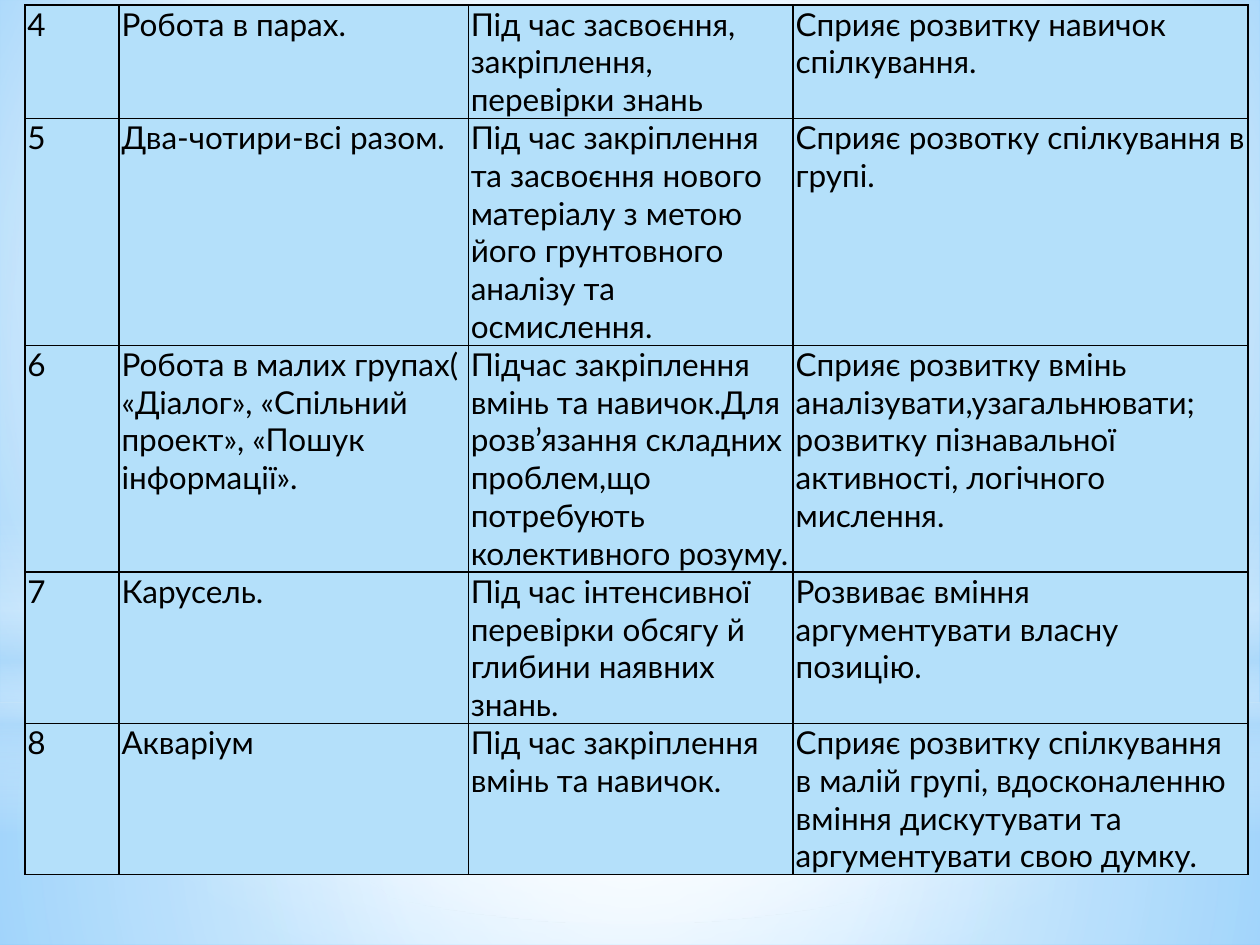
from lxml import etree
from pptx import Presentation
from pptx.dml.color import RGBColor
from pptx.enum import shapes, text
from pptx.oxml import ns, parse_xml
from pptx.util import Cm, Pt

COLORS = {
    "white": "FFFFFF",
    "pale": "B4DCFA",
    "sky": "9ED5FF",
    "blue": "5BB9FF",
    "cell": "B4E0FA",
    "ink": "000000",
}
FONT = "Lato"
WIDTH, HEIGHT = 25.4, 19.05
LINE_HEIGHT = 0.76
COLUMN_WIDTHS = (1.9, 7.04, 6.55, 9.17)
CENTER = (50, 50, 50, 50)

METHODS = [
    ("4", "Робота в парах.",
     "Під час засвоєння, закріплення, перевірки знань",
     "Сприяє розвитку навичок спілкування."),
    ("5", "Два-чотири-всі разом.",
     "Під час закріплення та засвоєння нового матеріалу з метою його "
     "грунтовного аналізу та осмислення.",
     "Сприяє розвотку спілкування в групі."),
    ("6", "Робота в малих групах( «Діалог», «Спільний проект», «Пошук інформації».",
     "Підчас закріплення вмінь та навичок.Для розв’язання складних "
     "проблем,що потребують колективного розуму.",
     "Сприяє розвитку вмінь аналізувати,узагальнювати; розвитку "
     "пізнавальної активності, логічного мислення."),
    ("7", "Карусель.",
     "Під час інтенсивної перевірки обсягу й глибини наявних знань.",
     "Розвиває вміння аргументувати власну позицію."),
    ("8", "Акваріум",
     "Під час закріплення вмінь та навичок.",
     "Сприяє розвитку спілкування в малій групі, вдосконаленню вміння "
     "дискутувати та аргументувати свою думку."),
]
LINES_PER_ROW = (3, 6, 6, 4, 4)


def gradient(stops, focus=None):
    marks = "".join(
        f'<a:gs pos="{position * 1000}"><a:srgbClr val="{COLORS[color]}">'
        f'<a:alpha val="{opacity * 1000}"/></a:srgbClr></a:gs>'
        for position, color, opacity in stops
    )
    if focus:
        left, top, right, bottom = (side * 1000 for side in focus)
        direction = (
            f'<a:path path="circle"><a:fillToRect l="{left}" t="{top}" '
            f'r="{right}" b="{bottom}"/></a:path>'
        )
    else:
        direction = '<a:lin ang="5400000" scaled="0"/>'
    return parse_xml(
        f'<a:gradFill {ns.nsdecls("a")} rotWithShape="1">'
        f"<a:gsLst>{marks}</a:gsLst>{direction}</a:gradFill>"
    )


def replace_solid_fill(properties, fill):
    properties.replace(properties.find(ns.qn("a:solidFill")), fill)


def paint_background(slide):
    slide.background.fill.solid()
    properties = slide.element.find(".//" + ns.qn("p:bgPr"))
    stops = [(0, "sky", 100), (60, "white", 100), (100, "blue", 100)]
    replace_solid_fill(properties, gradient(stops, (20, 10, 20, 60)))


def add_glow(slide, kind, top, height, stops, focus=CENTER):
    glow = slide.shapes.add_shape(kind, 0, Cm(top), Cm(WIDTH), Cm(height))
    glow.shadow.inherit = False
    glow.line.fill.background()
    glow.fill.solid()
    replace_solid_fill(glow.element.spPr, gradient(stops, focus))


def add_borders(cell):
    properties = cell._tc.get_or_add_tcPr()
    for index, side in enumerate(("lnL", "lnR", "lnT", "lnB")):
        border = etree.Element(ns.qn(f"a:{side}"), w=str(Pt(1)))
        fill = etree.SubElement(border, ns.qn("a:solidFill"))
        etree.SubElement(fill, ns.qn("a:srgbClr"), val=COLORS["ink"])
        properties.insert(index, border)


def fill_cell(cell, wording):
    cell.margin_left = cell.margin_right = Cm(0.05)
    cell.margin_top = cell.margin_bottom = 0
    cell.vertical_anchor = text.MSO_ANCHOR.TOP
    cell.fill.solid()
    cell.fill.fore_color.rgb = RGBColor.from_string(COLORS["cell"])
    add_borders(cell)
    run = cell.text_frame.paragraphs[0].add_run()
    run.text = wording
    run.font.name = FONT
    run.font.size = Pt(18)
    run.font.color.rgb = RGBColor.from_string(COLORS["ink"])


def add_methods_table(slide):
    table = slide.shapes.add_table(
        len(METHODS), len(COLUMN_WIDTHS), Cm(0.5), Cm(0.1),
        Cm(sum(COLUMN_WIDTHS)), Cm(LINE_HEIGHT * sum(LINES_PER_ROW)),
    ).table
    table.first_row = table.horz_banding = False
    for column, width in zip(table.columns, COLUMN_WIDTHS):
        column.width = Cm(width)
    for row, lines, method in zip(table.rows, LINES_PER_ROW, METHODS):
        row.height = Cm(LINE_HEIGHT * lines)
        for cell, wording in zip(row.cells, method):
            fill_cell(cell, wording)


def main():
    deck = Presentation()
    deck.slide_width, deck.slide_height = Cm(WIDTH), Cm(HEIGHT)
    slide = deck.slides.add_slide(deck.slide_layouts[6])
    rectangle = shapes.MSO_SHAPE.RECTANGLE
    horizon = 14.17
    paint_background(slide)
    add_glow(slide, rectangle, horizon, HEIGHT - horizon,
             [(0, "white", 91), (37, "white", 76), (100, "pale", 79)])
    add_glow(slide, rectangle, 0, horizon,
             [(0, "white", 89), (48, "white", 62), (100, "pale", 79)])
    add_glow(slide, rectangle, 10.46, 6.35,
             [(0, "white", 0), (29, "white", 30), (45, "pale", 40),
              (55, "white", 26), (65, "pale", 60), (100, "white", 0)], None)
    add_glow(slide, shapes.MSO_SHAPE.OVAL, 4.45, horizon,
             [(0, "white", 100), (56, "white", 0)])
    add_methods_table(slide)
    deck.save("out.pptx")


if __name__ == "__main__":
    main()
